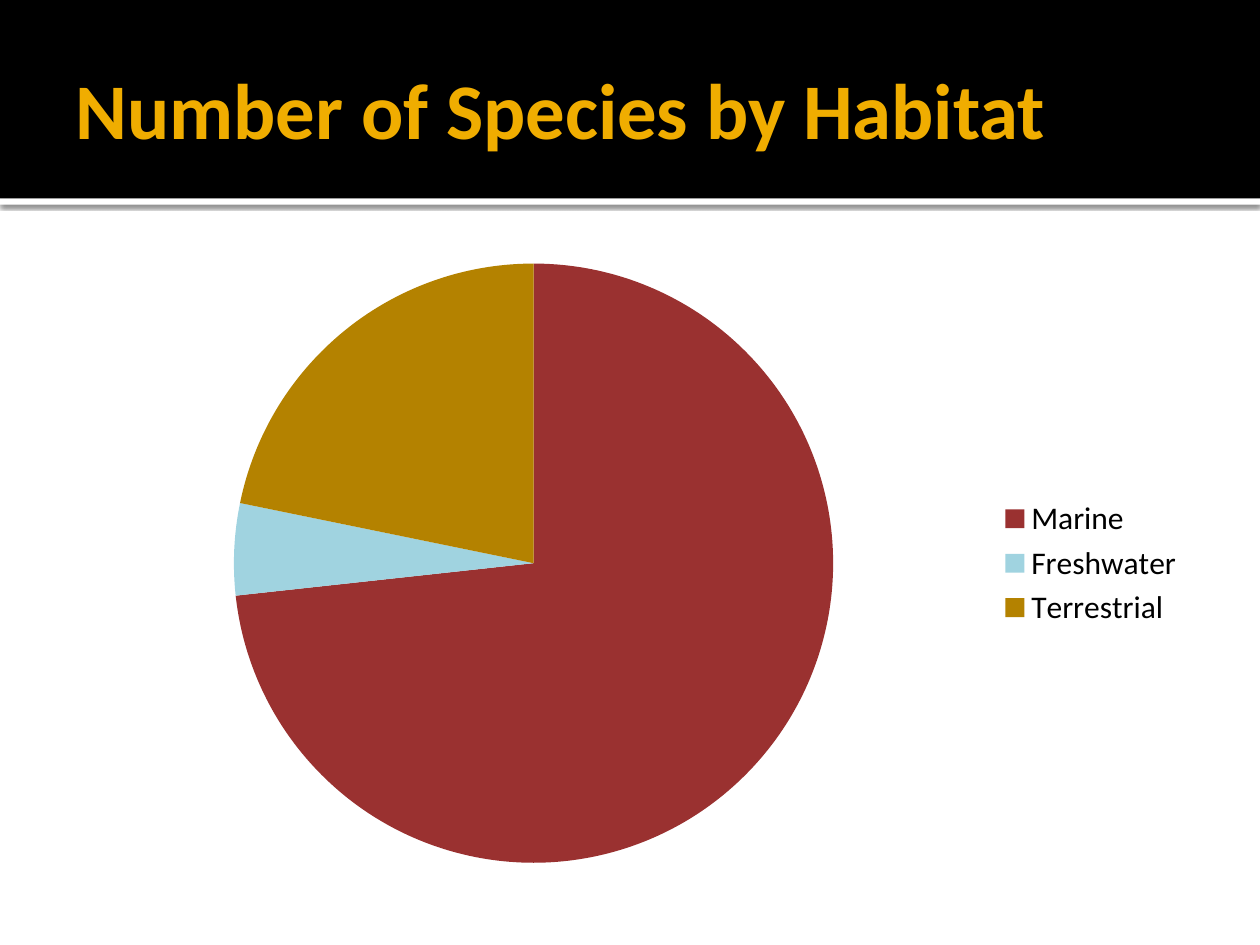
from lxml.etree import SubElement
from pptx import Presentation
from pptx.chart.data import CategoryChartData
from pptx.dml.color import RGBColor
from pptx.enum.chart import XL_CHART_TYPE, XL_LEGEND_POSITION
from pptx.enum.shapes import MSO_SHAPE
from pptx.enum.text import MSO_ANCHOR
from pptx.oxml import parse_xml
from pptx.oxml.ns import nsdecls, qn
from pptx.util import Inches, Pt

WIDTH, HEIGHT = 10, 7.5
MARGIN = 0.05 * WIDTH
BANNER_HEIGHT = 0.21 * HEIGHT
FONT = "Calibri"
HABITATS = [
    ("Marine", 74, "9A3130"),
    ("Freshwater", 5, "A0D3E0"),
    ("Terrestrial", 22, "B48200"),
]


def color(hex_value):
    """Turn a hex string into a colour."""
    return RGBColor.from_string(hex_value)


def add_band(slide, top, height, fill):
    """Add a full-width rectangle without outline or shadow."""
    band = slide.shapes.add_shape(
        MSO_SHAPE.RECTANGLE, 0, Inches(top), Inches(WIDTH), Inches(height)
    )
    band.shadow.inherit = False
    band.fill.solid()
    band.fill.fore_color.rgb = color(fill)
    band.line.fill.background()
    return band


def add_shadow(shape, blur, distance, opacity):
    """Give a shape a black shadow that falls straight down."""
    effects = shape._element.spPr.find(qn("a:effectLst"))
    effects.append(parse_xml(
        f'<a:outerShdw {nsdecls("a")} blurRad="{Pt(blur)}" dist="{Pt(distance)}" '
        f'dir="5400000" algn="t" rotWithShape="0"><a:srgbClr val="000000">'
        f'<a:alpha val="{opacity * 1000}"/></a:srgbClr></a:outerShdw>'
    ))


def add_title(slide, text):
    """Add the bold heading over the banner."""
    box = slide.shapes.add_textbox(
        Inches(MARGIN), Inches(0.17), Inches(WIDTH - 2 * MARGIN), Inches(1.37)
    )
    frame = box.text_frame
    frame.word_wrap = True
    frame.vertical_anchor = MSO_ANCHOR.MIDDLE
    frame.margin_left = Inches(0.1)
    frame.margin_right = frame.margin_top = frame.margin_bottom = Inches(0.05)
    run = frame.paragraphs[0].add_run()
    run.text = text
    run.font.name = FONT
    run.font.size = Pt(45)
    run.font.bold = True
    run.font.color.rgb = color("F0AD00")


def place_plot(chart, **shares):
    """Fix the inner plot area as shares of the chart's size."""
    plot_area = chart._chartSpace.chart.plotArea
    for old_layout in plot_area.findall(qn("c:layout")):
        plot_area.remove(old_layout)
    layout = parse_xml(f'<c:layout {nsdecls("c")}><c:manualLayout/></c:layout>')
    settings = {"layoutTarget": "inner", "xMode": "edge", "yMode": "edge", **shares}
    for name, value in settings.items():
        SubElement(layout[0], qn(f"c:{name}")).set("val", str(value))
    plot_area.insert(0, layout)


def add_pie(slide, slices):
    """Add a pie chart with one colour per slice and a legend at the right."""
    data = CategoryChartData()
    data.categories = [name for name, _, _ in slices]
    data.add_series("Series 1", [value for _, value, _ in slices])
    top = 1.94
    chart = slide.shapes.add_chart(
        XL_CHART_TYPE.PIE, Inches(MARGIN), Inches(top),
        Inches(WIDTH - 2 * MARGIN), Inches(HEIGHT - MARGIN - top), data
    ).chart
    chart.has_title = False
    chart.font.name = FONT
    chart.font.size = Pt(18)
    chart.font.color.rgb = color("000000")
    chart.has_legend = True
    chart.legend.position = XL_LEGEND_POSITION.RIGHT
    chart.legend.include_in_layout = False
    plot = chart.plots[0]
    plot.vary_by_categories = True
    for index, (_, _, fill) in enumerate(slices):
        point = plot.series[0].points[index]
        point.format.fill.solid()
        point.format.fill.fore_color.rgb = color(fill)
        point.format.line.fill.background()
    place_plot(chart, x=0.15, y=0.03, w=0.53, h=0.94)


def main():
    """Build the slide and save it."""
    presentation = Presentation()
    presentation.slide_width = Inches(WIDTH)
    presentation.slide_height = Inches(HEIGHT)
    slide = presentation.slides.add_slide(presentation.slide_layouts[6])
    slide.background.fill.solid()
    slide.background.fill.fore_color.rgb = color("FFFFFF")
    rule = add_band(slide, BANNER_HEIGHT, 0.05, "FFFFFF")
    add_shadow(rule, blur=2.5, distance=0.8, opacity=60)
    add_band(slide, 0, BANNER_HEIGHT, "000000")
    add_title(slide, "Number of Species by Habitat")
    add_pie(slide, HABITATS)
    presentation.save("out.pptx")


if __name__ == "__main__":
    main()
